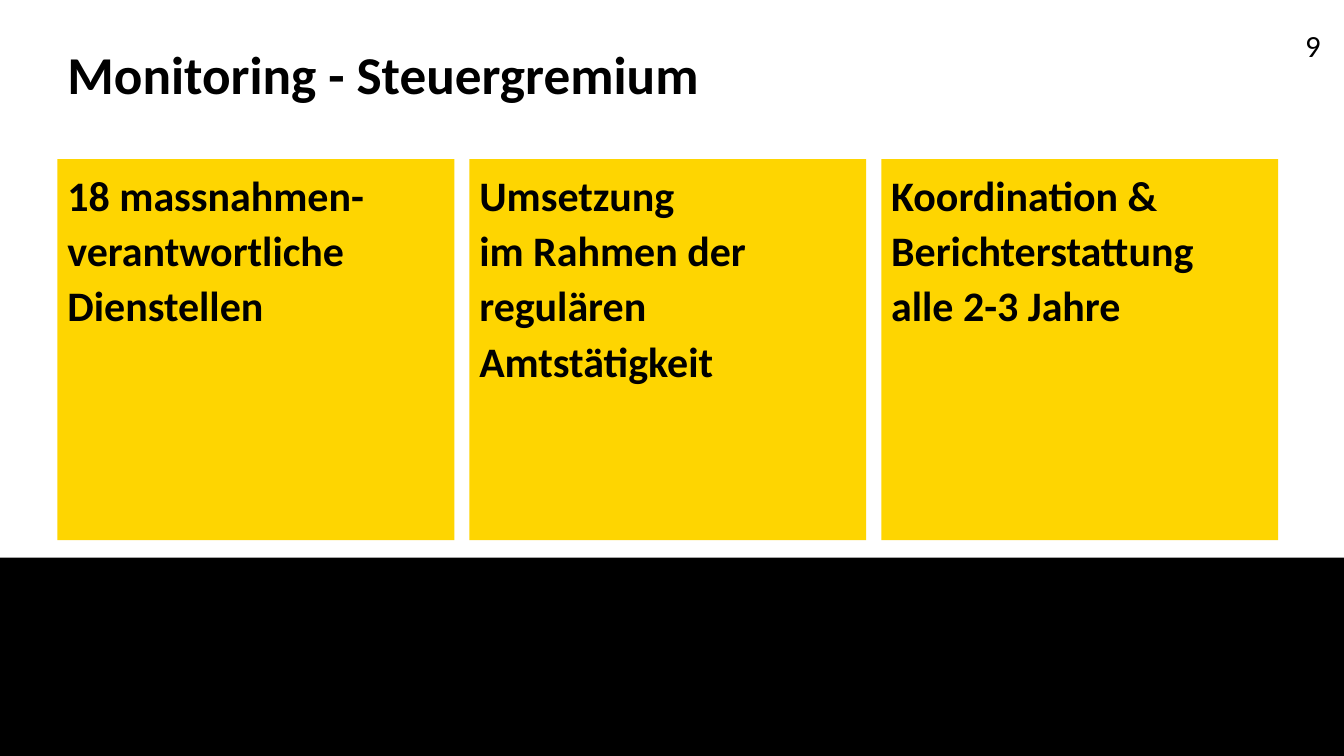
from pptx import Presentation
from pptx.dml.color import RGBColor
from pptx.enum.shapes import MSO_SHAPE as SHAPE
from pptx.enum.text import MSO_ANCHOR as ANCHOR, PP_ALIGN as ALIGN
from pptx.util import Cm, Pt

TITLE = "Monitoring - Steuergremium"
PAGE = "9"
CARDS = [
    ["18 massnahmen-", "verantwortliche Dienstellen"],
    ["Umsetzung", "im Rahmen der regulären Amtstätigkeit"],
    ["Koordination & Berichterstattung", "alle 2-3 Jahre"],
]
FONT = "Calibri"
BLACK, YELLOW = "000000", "FED501"
WIDTH, HEIGHT = 33.87, 19.05
LEFT, CARD_TOP, CARD_W, CARD_H, GAP = 1.45, 4.01, 10, 9.6, 0.38
BAND_TOP = 14.05


def color(value):
    return RGBColor.from_string(value)


def add_box(slide, box, fill):
    sp = slide.shapes.add_shape(SHAPE.RECTANGLE, *map(Cm, box))
    sp.shadow.inherit = False
    sp.fill.solid()
    sp.fill.fore_color.rgb = color(fill)
    sp.line.fill.background()
    return sp


def write(sp, lines, size, bold=True, spacing=1.0, align=ALIGN.LEFT, anchor=ANCHOR.TOP):
    tf = sp.text_frame
    tf.word_wrap = True
    tf.vertical_anchor = anchor
    p = tf.paragraphs[0]
    p.alignment = align
    p.line_spacing = spacing
    p.font.size = Pt(size)
    for i, line in enumerate(lines):
        if i:
            p.add_line_break()
        r = p.add_run()
        r.text = line
        r.font.name = FONT
        r.font.size = Pt(size)
        r.font.bold = bold
        r.font.color.rgb = color(BLACK)


def main():
    prs = Presentation()
    prs.slide_width, prs.slide_height = Cm(WIDTH), Cm(HEIGHT)
    s = prs.slides.add_slide(prs.slide_layouts[6])

    add_box(s, (0, BAND_TOP, WIDTH, HEIGHT - BAND_TOP), BLACK)

    title = s.shapes.add_textbox(Cm(LEFT), Cm(0.74), Cm(30.76), Cm(2.44))
    write(title, [TITLE], 38, spacing=0.9, anchor=ANCHOR.MIDDLE)

    for i, lines in enumerate(CARDS):
        x = LEFT + i * (CARD_W + GAP)
        card = add_box(s, (x, CARD_TOP, CARD_W, CARD_H), YELLOW)
        write(card, lines, 30, spacing=1.1)

    page = s.shapes.add_textbox(Cm(32.21), Cm(0.56), Cm(1.75), Cm(2.62))
    write(page, [PAGE], 22, bold=False, align=ALIGN.CENTER)

    prs.save("out.pptx")


if __name__ == "__main__":
    main()
